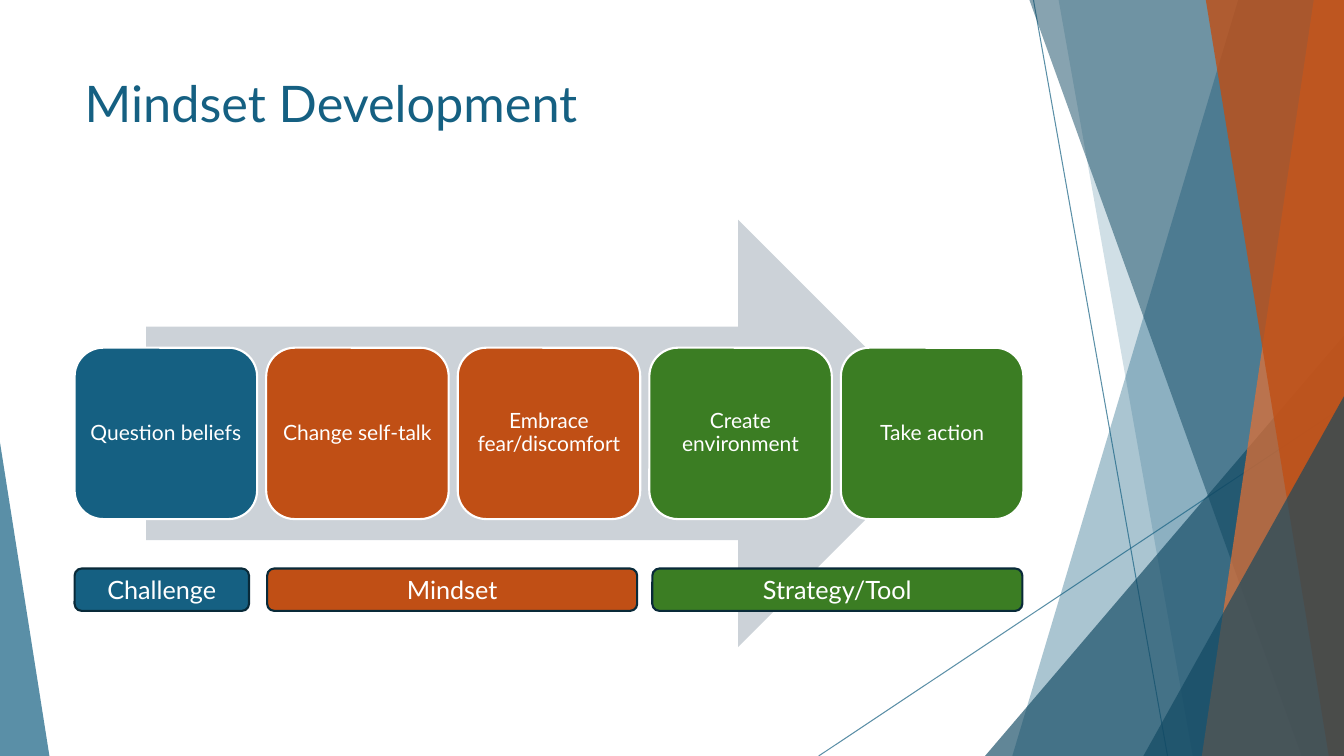
from lxml import etree
from pptx import Presentation
from pptx.dml.color import RGBColor
from pptx.enum.shapes import MSO_CONNECTOR, MSO_SHAPE
from pptx.enum.text import MSO_ANCHOR, PP_ALIGN
from pptx.oxml.ns import qn
from pptx.util import Inches, Pt

LINE = MSO_CONNECTOR.STRAIGHT
ARROW = MSO_SHAPE.RIGHT_ARROW
ROUND = MSO_SHAPE.ROUNDED_RECTANGLE
WEDGE = MSO_SHAPE.ISOSCELES_TRIANGLE
TOP, MIDDLE = MSO_ANCHOR.TOP, MSO_ANCHOR.MIDDLE
LEFT, CENTER = PP_ALIGN.LEFT, PP_ALIGN.CENTER

WIDE, HIGH = 13.33, 7.5
COLORS = {
    "blue": "156082", "navy": "104862", "edge": "092A39",
    "rust": "C04F15", "orange": "E97132", "green": "3B7D23",
    "grey": "CCD2D8", "white": "FFFFFF",
}


class Deck:
    """Holds the style and the current slide."""

    font = "Lato"

    def __init__(self):
        self.prs = Presentation()
        self.prs.slide_width = Inches(WIDE)
        self.prs.slide_height = Inches(HIGH)
        self.slide = self.prs.slides.add_slide(self.prs.slide_layouts[5])
        self.shapes = self.slide.shapes

    def color(self, name):
        return RGBColor.from_string(COLORS[name])

    def fade(self, shape, alpha):
        for tag in shape.element.spPr.iter(qn("a:srgbClr")):
            etree.SubElement(tag, qn("a:alpha")).set("val", str(alpha * 1000))

    def paint(self, shape, fill, edge=None, alpha=100):
        shape.shadow.inherit = False
        shape.fill.solid()
        shape.fill.fore_color.rgb = self.color(fill)
        if edge:
            shape.line.color.rgb = self.color(edge)
            shape.line.width = Pt(1.5)
        else:
            shape.line.fill.background()
        if alpha < 100:
            self.fade(shape, alpha)

    def letter(self, shape, text, size, color, frame, para):
        box = shape.text_frame
        box.text = text
        line = box.paragraphs[0]
        font = {"name": self.font, "size": Pt(size), "bold": False}
        for item, values in ((box, {"word_wrap": True, **frame}),
                             (line, para), (line.runs[0].font, font)):
            for key, value in values.items():
                setattr(item, key, value)
        line.runs[0].font.color.rgb = self.color(color)

    def title(self, text, *place):
        shape = self.shapes.title
        for key, value in zip(("left", "top", "width", "height"), place):
            setattr(shape, key, Inches(value))
        self.letter(shape, text, 36, "blue", {"vertical_anchor": TOP},
                    {"alignment": LEFT})

    def line(self, *ends):
        wire = self.shapes.add_connector(LINE, *map(Inches, ends))
        wire.line.color.rgb = self.color("blue")
        wire.line.width = Pt(0.75)
        self.fade(wire, 70)
        etree.SubElement(wire.element.spPr, qn("a:effectLst"))

    def facet(self, top, base, fill, alpha):
        """Slanted left edge from top to base, filled to the right side."""
        build = self.shapes.build_freeform(Inches(top), 0)
        spots = ((WIDE, 0), (WIDE, HIGH), (base, HIGH))
        build.add_line_segments([(Inches(x), Inches(y)) for x, y in spots])
        self.paint(build.convert_to_shape(), fill, alpha=alpha)

    def block(self, kind, place, fill, edge=None, alpha=100):
        shape = self.shapes.add_shape(kind, *map(Inches, place))
        self.paint(shape, fill, edge, alpha)
        return shape

    def wedge(self, left, top, width, peak, fill, alpha):
        place = (left, top, width, HIGH - top)
        shape = self.block(WEDGE, place, fill, alpha=alpha)
        shape.adjustments[0] = peak

    def label(self, place, fill, edge, text, size, frame, para):
        shape = self.block(ROUND, place, fill, edge)
        self.letter(shape, text, size, "white",
                    {"vertical_anchor": MIDDLE, **frame},
                    {"alignment": CENTER, **para})


def main():
    deck = Deck()

    # Slanted side panels
    deck.line(10.25, 0, 11.58, HIGH)
    deck.line(WIDE, 4.03, 8.12, HIGH)
    deck.facet(12.28, 10.04, "blue", 36)
    deck.facet(10.5, 11.83, "blue", 20)
    deck.wedge(9.77, 3.33, 3.56, 1, "navy", 66)
    deck.facet(10.21, 12.91, "navy", 50)
    deck.facet(13.03, 11.92, "orange", 70)
    deck.facet(11.96, 13.18, "rust", 80)
    deck.wedge(11.34, 3.93, 1.99, 1, "navy", 66)
    deck.wedge(0, 4.39, 0.49, 0, "blue", 70)

    # Title
    deck.title("Mindset Development", 0.74, 0.67, 9.4, 1.44)

    # Arrow with the five steps
    deck.block(ARROW, (1.45, 2.18, 7.99, 4.24), "grey")
    steps = (
        ("Question beliefs", "blue"),
        ("Change self-talk", "rust"),
        ("Embrace fear/discomfort", "rust"),
        ("Create environment", "green"),
        ("Take action", "green"),
    )
    sides = ("left", "top", "right", "bottom")
    tight = {f"margin_{side}": Inches(0.06) for side in sides}
    for i, (text, fill) in enumerate(steps):
        deck.label((0.74 + 1.9 * i, 3.45, 1.81, 1.7), fill, "white", text, 15,
                   tight, {"line_spacing": 0.9})

    # Phase bars
    bars = (
        ("Challenge", "blue", 0.74, 1.73),
        ("Mindset", "rust", 2.65, 3.67),
        ("Strategy/Tool", "green", 6.47, 3.67),
    )
    for text, fill, left, width in bars:
        deck.label((left, 5.64, width, 0.42), fill, "edge", text, 18, {}, {})

    deck.prs.save("out.pptx")


if __name__ == "__main__":
    main()
